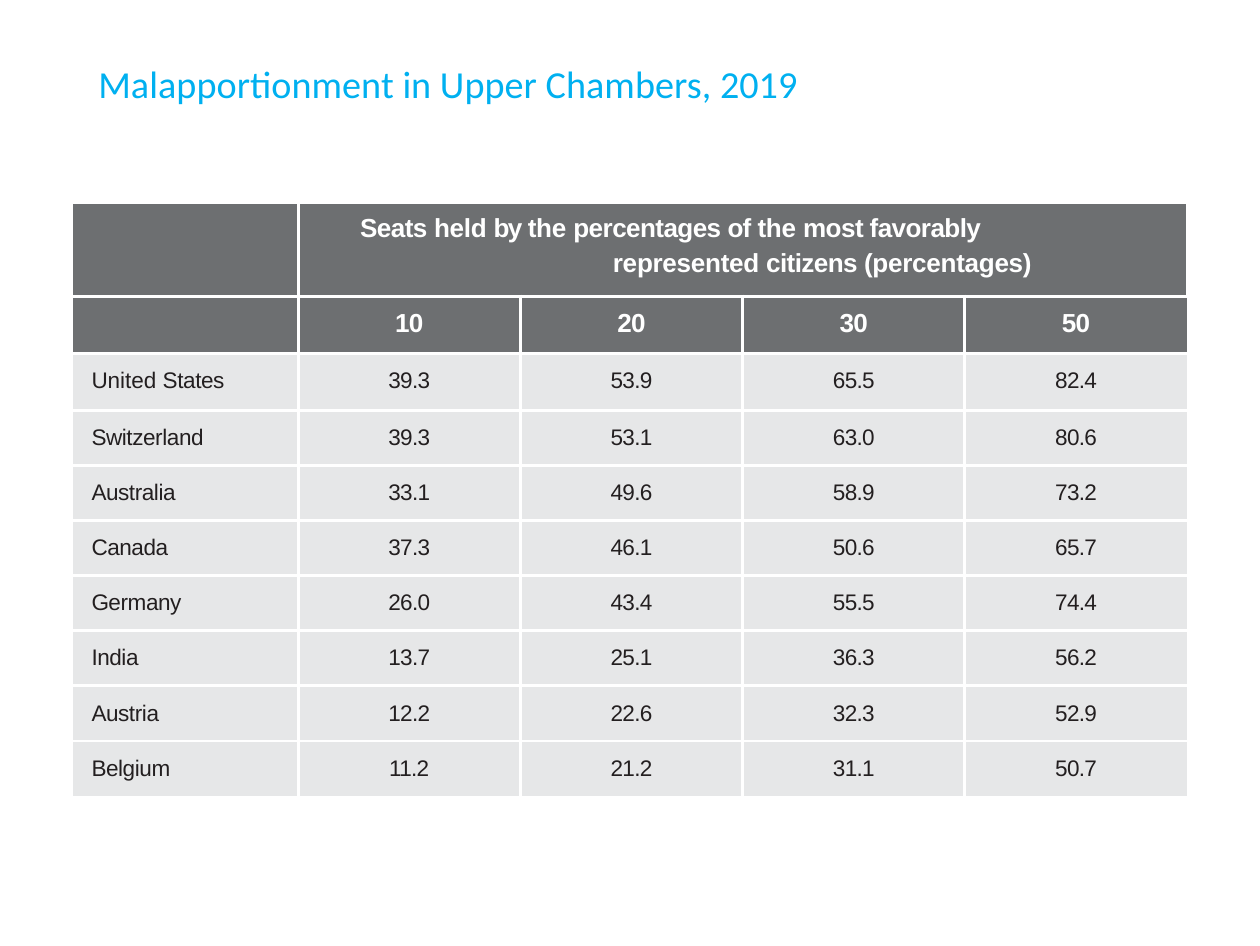
from dataclasses import dataclass

from pptx import Presentation
from pptx.dml.color import RGBColor
from pptx.enum.text import PP_ALIGN
from pptx.oxml import parse_xml
from pptx.oxml.ns import nsdecls
from pptx.util import Cm, Pt

LEFT, CENTER = PP_ALIGN.LEFT, PP_ALIGN.CENTER


@dataclass(frozen=True)
class Theme:
    title_font: str = "Calibri"
    table_font: str = "Arial"
    title_size: float = 11
    head_size: float = 7.5
    body_size: float = 6.5
    title: str = "00B0F0"
    head_text: str = "FFFFFF"
    body_text: str = "231F20"
    head_fill: str = "6D6F71"
    body_fill: str = "E6E7E8"
    border: str = "FFFFFF"


# Each heading run carries its own letter spacing in points.
HEADING = [
    ("Seats ", -0.2), ("held ", -0.1), ("by ", -0.5), ("the ", -0.1),
    ("percentages ", -0.2), ("of ", -0.3), ("the ", -0.1),
    ("most favorably ", -0.2), ("represented ", -0.1),
    ("citizens ", -0.2), ("(percentages)", -0.1),
]
SHARES = ["10", "20", "30", "50"]
COUNTRIES = [
    ([("United ", 0), ("States", -0.1)], ["39.3", "53.9", "65.5", "82.4"]),
    ([("Switzerland", -0.1)], ["39.3", "53.1", "63.0", "80.6"]),
    ([("Australia", -0.1)], ["33.1", "49.6", "58.9", "73.2"]),
    ([("Canada", -0.1)], ["37.3", "46.1", "50.6", "65.7"]),
    ([("Germany", -0.1)], ["26.0", "43.4", "55.5", "74.4"]),
    ([("India", -0.1)], ["13.7", "25.1", "36.3", "56.2"]),
    ([("Austria", -0.1)], ["12.2", "22.6", "32.3", "52.9"]),
    ([("Belgium", -0.1)], ["11.2", "21.2", "31.1", "50.7"]),
]
COL_WIDTHS = [2.29] + [2.26] * 4
ROW_HEIGHTS = [0.94, 0.58, 0.58] + [0.56] * 7


class SlideBuilder:
    def __init__(self, slide, theme):
        self.s = slide
        self.theme = theme

    def paragraph(self, tf, runs, font, size, color, bold=False, align=LEFT,
                  before=0, margin=0, indent=0, right=0):
        """Fill the first paragraph with (text, letter spacing) runs."""
        p = tf.paragraphs[0]
        p.alignment = align
        p.space_before = Pt(before)
        pPr = p._p.get_or_add_pPr()
        for name, length in (("marL", margin), ("marR", right),
                             ("indent", indent)):
            pPr.set(name, str(Cm(length)))
        for text, spacing in runs:
            r = p.add_run()
            r.text = text
            r.font.name = font
            r.font.size = Pt(size)
            r.font.bold = bold
            r.font.color.rgb = RGBColor.from_string(color)
            r._r.get_or_add_rPr().set("spc", str(round(spacing * 100)))
        if not runs:
            p._p.append(parse_xml(
                f'<a:endParaRPr {nsdecls("a")} sz="{round(size * 100)}"/>'))
        return p

    def title(self, text, left, top, width, height):
        sp = self.s.shapes.add_textbox(Cm(left), Cm(top), Cm(width), Cm(height))
        tf = sp.text_frame
        tf.word_wrap = True
        tf.margin_left = tf.margin_right = tf.margin_bottom = 0
        tf.margin_top = Cm(0.03)
        t = self.theme
        self.paragraph(tf, [(text, 0)], t.title_font, t.title_size, t.title,
                       before=0.9, margin=0.03)

    def table(self, left, top, col_widths, row_heights):
        frame = self.s.shapes.add_table(
            len(row_heights), len(col_widths), Cm(left), Cm(top),
            Cm(sum(col_widths)), Cm(sum(row_heights)))
        table = frame.table
        table.first_row = table.horz_banding = False
        for col, width in zip(table.columns, col_widths):
            col.width = Cm(width)
        for row, height in zip(table.rows, row_heights):
            row.height = Cm(height)
        last_row, last_col = len(row_heights) - 1, len(col_widths) - 1
        for i in range(last_row + 1):
            for j in range(last_col + 1):
                self.borders(table.cell(i, j), L=j > 0, R=j < last_col,
                             T=i > 0, B=i < last_row)
        return table

    def borders(self, cell, **sides):
        """Draw the sides given as true and clear the others."""
        tcPr = cell._tc.get_or_add_tcPr()
        line = (f'<a:solidFill><a:srgbClr val="{self.theme.border}"/>'
                '</a:solidFill>')
        for side, drawn in sides.items():
            tcPr.append(parse_xml(
                f'<a:ln{side} {nsdecls("a")} w="{Pt(1)}">'
                f'{line if drawn else "<a:noFill/>"}</a:ln{side}>'))

    def cell(self, cell, runs, head=False, inset=0.15, **layout):
        t = self.theme
        cell.margin_left = cell.margin_right = cell.margin_bottom = 0
        cell.margin_top = Cm(inset)
        cell.fill.solid()
        cell.fill.fore_color.rgb = RGBColor.from_string(
            t.head_fill if head else t.body_fill)
        return self.paragraph(
            cell.text_frame, runs, t.table_font,
            t.head_size if head else t.body_size,
            t.head_text if head else t.body_text, bold=head, **layout)


def main():
    prs = Presentation()
    prs.slide_width, prs.slide_height = Pt(363), Pt(272.5)
    b = SlideBuilder(prs.slides.add_slide(prs.slide_layouts[6]), Theme())
    b.title("Malapportionment in Upper Chambers, 2019", 0.97, 0.58, 7.29, 0.51)

    table = b.table(0.74, 2.07, COL_WIDTHS, ROW_HEIGHTS)
    table.cell(0, 1).merge(table.cell(0, 4))
    for row in range(2):
        b.cell(table.cell(row, 0), [], head=True, inset=0)
    p = b.cell(table.cell(0, 1), HEADING, head=True, inset=0.04,
               before=1.1, margin=3.2, indent=-2.57, right=1.2)
    p.line_spacing = 1.2
    for col, share in enumerate(SHARES, 1):
        b.cell(table.cell(1, col), [(share, -0.2)], head=True, inset=0.13,
               align=CENTER, before=3.8)

    for row, (country, values) in enumerate(COUNTRIES, 2):
        before = 4.5 if row == 2 else 4
        b.cell(table.cell(row, 0), country, before=before, margin=0.19)
        for col, value in enumerate(values, 1):
            b.cell(table.cell(row, col), [(value, -0.2)], align=CENTER,
                   before=before)

    prs.save("out.pptx")


if __name__ == "__main__":
    main()
